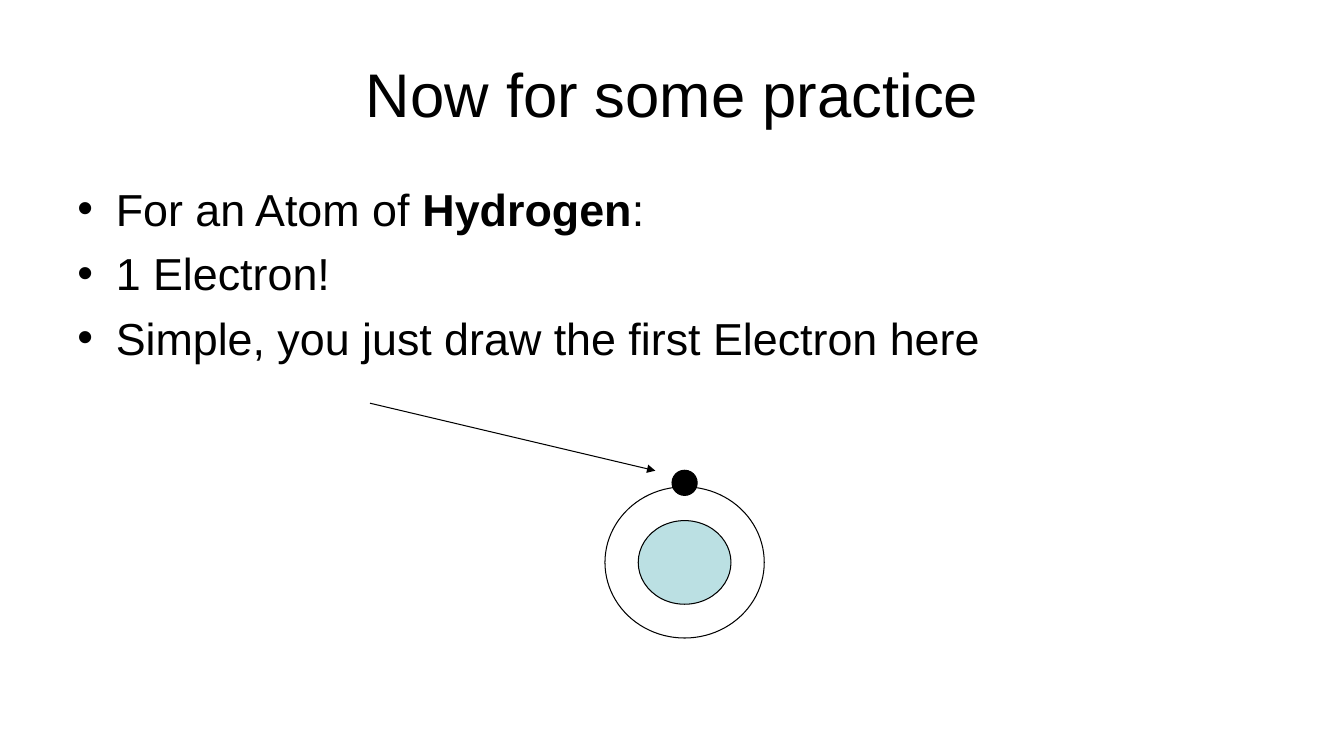
from pptx import Presentation
from pptx.dml.color import RGBColor
from pptx.enum.shapes import MSO_CONNECTOR, MSO_SHAPE
from pptx.enum.text import MSO_ANCHOR, PP_ALIGN
from pptx.oxml.ns import qn
from pptx.util import Inches, Pt
from lxml.etree import SubElement

BLACK = RGBColor(0x00, 0x00, 0x00)
NUCLEUS_BLUE = RGBColor(0xBB, 0xE0, 0xE3)
ATOM_X = 6.79
ATOM_Y = 5.58
BULLETS = [
    [("For an Atom of ", False), ("Hydrogen", True), (":", False)],
    [("1 Electron!", False)],
    [("Simple, you just draw the first Electron here", False)],
]


def add_run(paragraph, text, size, bold=False):
    run = paragraph.add_run()
    run.text = text
    formats = {"name": "Arial", "size": Pt(size), "bold": bold}
    for attribute, value in formats.items():
        setattr(run.font, attribute, value)
    run.font.color.rgb = BLACK


def set_title(slide, text):
    title = slide.shapes.title
    place = {"left": 0.67, "top": 0.3, "width": 12, "height": 1.25}
    for side, length in place.items():
        setattr(title, side, Inches(length))
    title.text_frame.vertical_anchor = MSO_ANCHOR.MIDDLE
    heading = title.text_frame.paragraphs[0]
    heading.alignment = PP_ALIGN.CENTER
    add_run(heading, text, 44)


def add_bullets(slide, items):
    box = slide.shapes.add_textbox(Inches(0.67), Inches(1.75), Inches(12), Inches(4.95))
    frame = box.text_frame
    frame.word_wrap = True
    for index, runs in enumerate(items):
        paragraph = frame.add_paragraph() if index else frame.paragraphs[0]
        paragraph.space_before = Pt(7.7)
        properties = paragraph._p.get_or_add_pPr()
        properties.set("marL", str(Inches(0.38)))
        properties.set("indent", str(Inches(-0.38)))
        SubElement(properties, qn("a:buFont"), typeface="Arial")
        SubElement(properties, qn("a:buChar"), char="•")
        for text, bold in runs:
            add_run(paragraph, text, 32, bold)


def add_circle(slide, center_y, width, height, color=None):
    circle = slide.shapes.add_shape(
        MSO_SHAPE.OVAL,
        Inches(ATOM_X - width / 2), Inches(center_y - height / 2),
        Inches(width), Inches(height),
    )
    circle.shadow.inherit = False
    if color is None:
        circle.fill.background()
    else:
        circle.fill.solid()
        circle.fill.fore_color.rgb = color
    circle.line.color.rgb = BLACK
    circle.line.width = Pt(0.75)


def add_arrow(slide, start, end):
    arrow = slide.shapes.add_connector(
        MSO_CONNECTOR.STRAIGHT, *(Inches(length) for length in start + end)
    )
    arrow.line.color.rgb = BLACK
    arrow.line.width = Pt(0.75)
    SubElement(arrow.line._get_or_add_ln(), qn("a:tailEnd"), type="triangle")
    SubElement(arrow._element.spPr, qn("a:effectLst"))


def main():
    presentation = Presentation()
    presentation.slide_width = Inches(13.33)
    presentation.slide_height = Inches(7.5)
    slide = presentation.slides.add_slide(presentation.slide_layouts[5])
    set_title(slide, "Now for some practice")
    add_bullets(slide, BULLETS)
    add_circle(slide, ATOM_Y, 0.92, 0.83, NUCLEUS_BLUE)
    add_circle(slide, ATOM_Y, 1.58, 1.5)
    add_circle(slide, 4.79, 0.25, 0.25, BLACK)
    add_arrow(slide, (3.67, 4), (6.5, 4.67))
    presentation.save("out.pptx")


if __name__ == "__main__":
    main()
